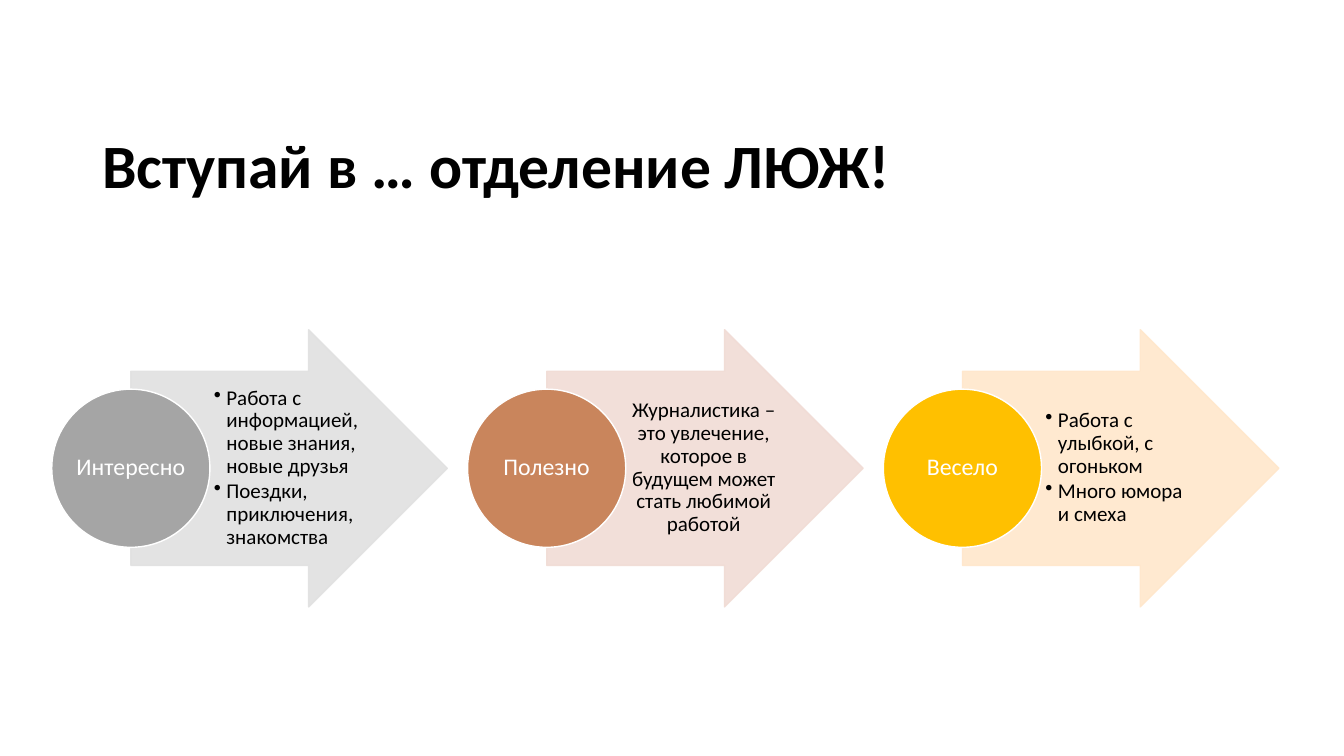
from lxml import etree
from pptx import Presentation
from pptx.dml.color import RGBColor
from pptx.enum.shapes import MSO_SHAPE
from pptx.enum.text import MSO_ANCHOR, PP_ALIGN
from pptx.oxml.ns import qn
from pptx.util import Pt

ARROW = MSO_SHAPE.RIGHT_ARROW
ELLIPSE = MSO_SHAPE.OVAL
MIDDLE = MSO_ANCHOR.MIDDLE
LEFT = PP_ALIGN.LEFT
CENTER = PP_ALIGN.CENTER

COLORS = {
    "black": "000000",
    "white": "FFFFFF",
    "gray": "A5A5A5",
    "gray_tint": "E1E1E1",
    "brown": "C9855C",
    "brown_tint": "F1DCD5",
    "gold": "FFC000",
    "gold_tint": "FFE7CB",
}
REASONS = [
    ("Интересно", "gray", True, [
        "Работа с информацией, новые знания, новые друзья",
        "Поездки, приключения, знакомства",
    ]),
    ("Полезно", "brown", False, [
        "Журналистика – это увлечение, которое в будущем может стать любимой работой",
    ]),
    ("Весело", "gold", True, [
        "Работа с улыбкой, с огоньком",
        "Много юмора и смеха",
    ]),
]
REASON_PITCH = 297


class SlideBuilder:
    """Draws styled elements on the current slide, with lengths in points."""

    def __init__(self, slide, font="Calibri"):
        self.slide = slide
        self.font = font

    def color(self, name):
        return RGBColor.from_string(COLORS[name])

    def shape(self, kind, box, fill, line, opacity=100):
        shape = self.slide.shapes.add_shape(kind, *map(Pt, box))
        shape.shadow.inherit = False
        shape.fill.solid()
        shape.fill.fore_color.rgb = self.color(fill)
        shape.line.color.rgb = self.color(line)
        shape.line.width = Pt(1)
        if opacity < 100:
            for color in shape.element.spPr.iter(qn("a:srgbClr")):
                etree.SubElement(color, qn("a:alpha"), val=str(opacity * 1000))
        return shape

    def arrow(self, box, color):
        shape = self.shape(ARROW, box, color, color, opacity=90)
        shape.adjustments[0] = 0.7
        shape.adjustments[1] = 0.5

    def circle(self, box, color, label):
        shape = self.shape(ELLIPSE, box, color, "white")
        self.fill_text(shape, [label], 17, "white", CENTER, (0.7, 0.7, 0.7, 0.7))

    def text(self, box, lines, size, align=LEFT, insets=(7.2, 3.6, 7.2, 3.6),
             bold=False, bulleted=False):
        shape = self.slide.shapes.add_textbox(*map(Pt, box))
        self.fill_text(shape, lines, size, "black", align, insets, bold, bulleted)

    def fill_text(self, shape, lines, size, color, align, insets, bold=False, bulleted=False):
        frame = shape.text_frame
        frame.word_wrap = True
        frame.vertical_anchor = MIDDLE
        frame.margin_left, frame.margin_top, frame.margin_right, frame.margin_bottom = map(Pt, insets)
        for index, line in enumerate(lines):
            paragraph = frame.add_paragraph() if index else frame.paragraphs[0]
            paragraph.alignment = align
            paragraph.line_spacing = 0.9
            if bulleted:
                paragraph.space_after = Pt(2.25)
                self.bullet(paragraph)
            run = paragraph.add_run()
            run.text = line
            run.font.name = self.font
            run.font.size = Pt(size)
            run.font.bold = bold
            run.font.color.rgb = self.color(color)

    def bullet(self, paragraph):
        paragraph.level = 1
        properties = paragraph._p.get_or_add_pPr()
        properties.set("marL", str(Pt(9)))
        properties.set("indent", str(Pt(-9)))
        etree.SubElement(properties, qn("a:buChar"), char="•")

    def reason(self, left, label, color, bulleted, lines):
        self.arrow((left + 56.5, 235.5, 226, 198), color + "_tint")
        self.text((left + 113, 265, 110, 138.5), lines, 15, LEFT if bulleted else CENTER,
                  (2.7, 0.7, 1.4, 0.7), bulleted=bulleted)
        self.circle((left, 278, 113, 113), color, label)


def main():
    presentation = Presentation()
    presentation.slide_width = Pt(960)
    presentation.slide_height = Pt(540)
    slide = presentation.slides.add_slide(presentation.slide_layouts[6])
    builder = SlideBuilder(slide)
    builder.text((66, 86.5, 828, 67.5), ["Вступай в … отделение ЛЮЖ!"], 44, bold=True)
    for index, reason in enumerate(REASONS):
        builder.reason(37 + index * REASON_PITCH, *reason)
    presentation.save("out.pptx")


if __name__ == "__main__":
    main()
